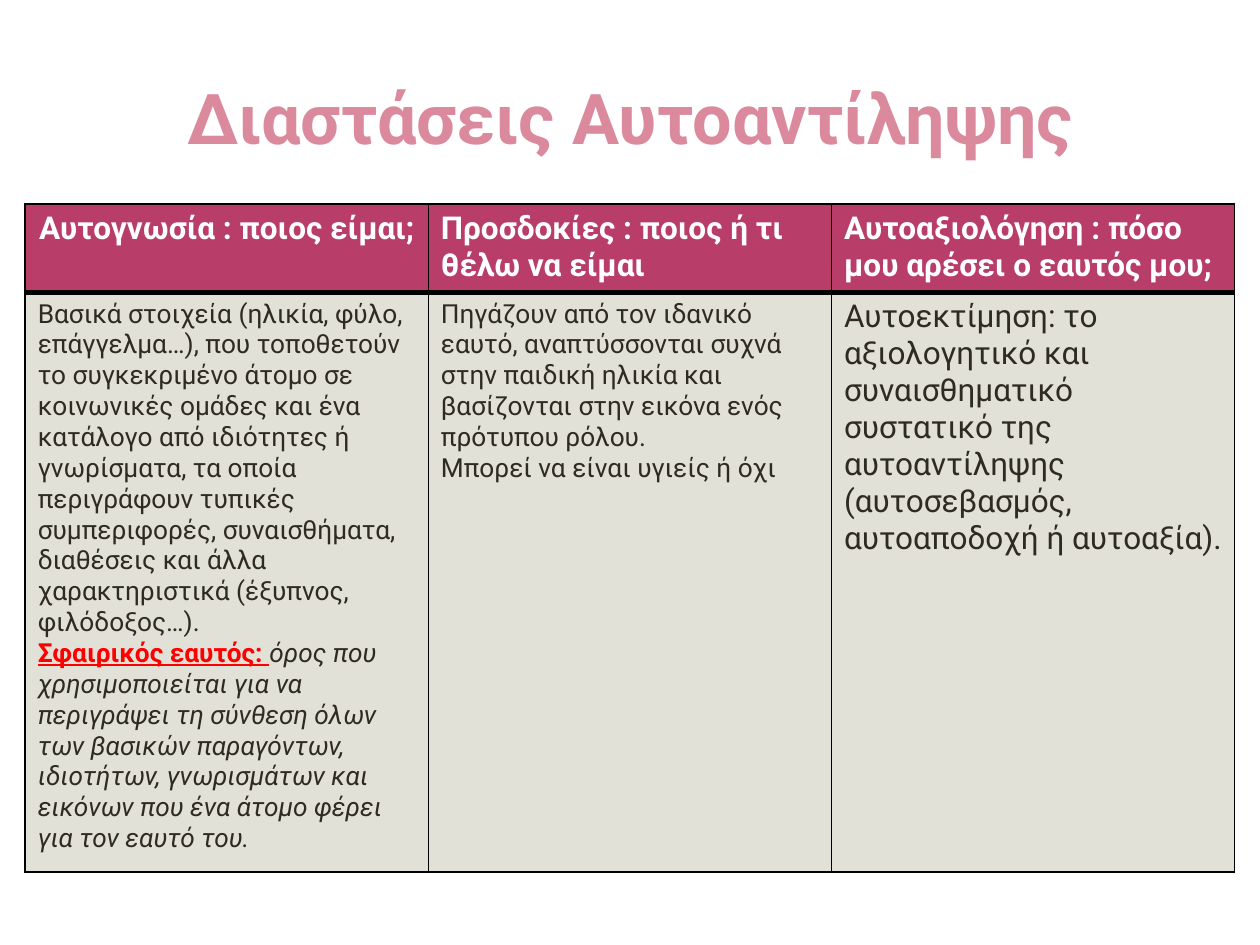
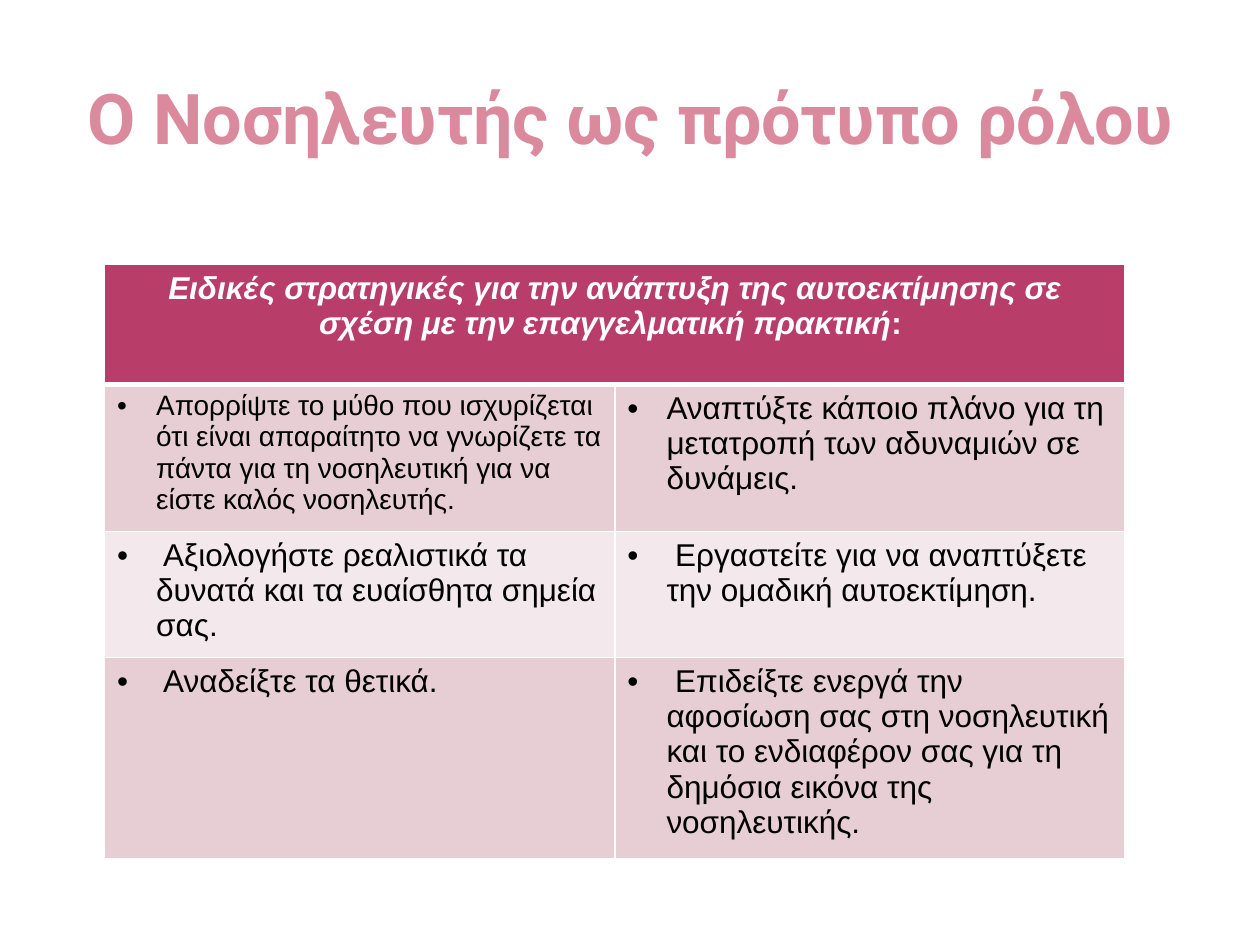
from dataclasses import dataclass, field

from lxml import etree
from pptx import Presentation
from pptx import util as u
from pptx.dml.color import RGBColor
from pptx.enum import text as t
from pptx.oxml import ns

# Shared colours and fonts
ROSE, WINE, WHITE, BLACK = "DB8A9E", "B83D68", "FFFFFF", "000000"
STONE, INK, RED = "E2E1D7", "2F2B20", "FF0000"
PINK, PALE = "E6CED4", "F3E8EB"
SANS, ARIAL = "Roboto", "Arial"
MID, LEFT = t.PP_ALIGN.CENTER, t.PP_ALIGN.LEFT
THIN, THICK = 1, 3


@dataclass
class Run:
    text: str
    style: dict = field(default_factory=dict)


@dataclass
class Cell:
    paras: list[list[Run]]
    size: int = 18
    align: t.PP_ALIGN = LEFT


@dataclass
class Grid:
    left: float
    top: float
    width: float
    heights: list[float]
    rows: list[list[Cell]]
    fills: list[str]
    font: str
    ink: str
    line: str
    head: dict
    bullet: bool = False


def tint(code: str) -> RGBColor:
    return RGBColor.from_string(code)


def put(para, text: str, *, size: int, font: str, color: str, bold=False,
        italic=False, under=False) -> None:
    """Add one formatted run to a paragraph."""
    run = para.add_run()
    run.text = text
    face = run.font
    face.size, face.name = u.Pt(size), font
    face.bold, face.italic, face.underline = bold, italic, under
    face.color.rgb = tint(color)


def dot(para) -> None:
    """Give a paragraph a hanging bullet."""
    props = para._p.get_or_add_pPr()
    props.set("marL", str(u.Inches(0.31)))
    props.set("indent", str(-u.Inches(0.31)))
    etree.SubElement(props, ns.qn("a:buFont"), typeface=ARIAL)
    etree.SubElement(props, ns.qn("a:buChar"), char="•")


def edge(cell, color: str, top: int, base: int) -> None:
    """Draw the four borders of a cell."""
    props = cell._tc.get_or_add_tcPr()
    for side, width in zip("LRTB", (THIN, THIN, top, base)):
        line = etree.SubElement(props, ns.qn(f"a:ln{side}"), w=str(u.Pt(width)))
        fill = etree.SubElement(line, ns.qn("a:solidFill"))
        etree.SubElement(fill, ns.qn("a:srgbClr"), val=color)


def title(slide, text: str) -> None:
    box = slide.shapes.add_textbox(
        u.Inches(0.5), u.Inches(0.3), u.Inches(9), u.Inches(1.25))
    frame = box.text_frame
    frame.word_wrap = True
    frame.vertical_anchor = t.MSO_ANCHOR.MIDDLE
    frame.margin_left = frame.margin_right = u.Inches(0.05)
    frame.margin_top = frame.margin_bottom = 0
    para = frame.paragraphs[0]
    para.alignment = MID
    put(para, text, size=40, font=SANS, color=ROSE, bold=True)


def write(cell, item: Cell, bullet: bool, look: dict) -> None:
    frame = cell.text_frame
    for i, runs in enumerate(item.paras):
        para = frame.add_paragraph() if i else frame.paragraphs[0]
        para.alignment = item.align
        if bullet:
            dot(para)
        for run in runs:
            put(para, run.text, **{"size": item.size, **look, **run.style})


def draw(slide, grid: Grid) -> None:
    count = len(grid.rows[-1])
    table = slide.shapes.add_table(
        len(grid.rows), count, u.Inches(grid.left), u.Inches(grid.top),
        u.Inches(grid.width), u.Inches(sum(grid.heights))).table
    for col in table.columns:
        col.width = u.Inches(grid.width / count)
    for r, (items, high) in enumerate(zip(grid.rows, grid.heights)):
        table.rows[r].height = u.Inches(high)
        # A row with a single cell spans the whole table
        if len(items) < count:
            table.cell(r, 0).merge(table.cell(r, count - 1))
        for cell in table.rows[r].cells:
            edge(cell, grid.line, THICK if r == 1 else THIN,
                 THIN if r else THICK)
            cell.fill.solid()
            cell.fill.fore_color.rgb = tint(grid.fills[r])
        look = {"font": grid.font, "color": grid.ink}
        if r == 0:
            look |= grid.head
        for c, item in enumerate(items):
            write(table.cell(r, c), item, grid.bullet and r > 0, look)


def plain(*texts: str, size: int = 18, align=LEFT) -> Cell:
    return Cell([[Run(text)] for text in texts], size, align)


# Dimensions of self-concept
SELF = Grid(
    left=0.2, top=1.62, width=9.6, heights=[0.69, 4.5],
    fills=[WINE, STONE], font=SANS, ink=INK, line=BLACK,
    head={"color": WHITE, "bold": True},
    rows=[
        [plain("Αυτογνωσία : ποιος είμαι;", align=MID),
         plain("Προσδοκίες : ποιος ή τι θέλω να είμαι"),
         plain("Αυτοαξιολόγηση : πόσο μου αρέσει ο εαυτός μου;")],
        [Cell([
            [Run("Βασικά στοιχεία (ηλικία, φύλο, επάγγελμα…), που τοποθετούν "
                 "το συγκεκριμένο άτομο σε κοινωνικές ομάδες και ένα κατάλογο "
                 "από ιδιότητες ή γνωρίσματα, τα οποία περιγράφουν τυπικές "
                 "συμπεριφορές, συναισθήματα, διαθέσεις και άλλα "
                 "χαρακτηριστικά (έξυπνος, φιλόδοξος…).")],
            [Run("Σφαιρικός εαυτός: ",
                 {"color": RED, "bold": True, "under": True}),
             Run("όρος που χρησιμοποιείται για να περιγράψει τη σύνθεση όλων "
                 "των βασικών παραγόντων, ιδιοτήτων, γνωρισμάτων και εικόνων "
                 "που ένα άτομο φέρει για τον εαυτό του.", {"italic": True})],
        ], size=15),
         plain("Πηγάζουν από τον ιδανικό εαυτό, αναπτύσσονται συχνά στην "
               "παιδική ηλικία και βασίζονται στην εικόνα ενός πρότυπου ρόλου.",
               "Μπορεί να είναι υγιείς ή όχι", size=15),
         plain("Αυτοεκτίμηση: το αξιολογητικό και συναισθηματικό συστατικό "
               "της αυτοαντίληψης (αυτοσεβασμός, αυτοαποδοχή ή αυτοαξία).")],
    ])

# Strategies for self-esteem at work
NURSE = Grid(
    left=0.83, top=2.1, width=8.1, heights=[0.95, 1.08, 0.95, 1.5],
    fills=[WINE, PINK, PALE, PINK], font=ARIAL, ink=BLACK, line=WHITE,
    head={"color": WHITE, "bold": True, "italic": True}, bullet=True,
    rows=[
        [Cell([[Run("Ειδικές στρατηγικές για την ανάπτυξη της αυτοεκτίμησης "
                    "σε σχέση με την επαγγελματική πρακτική"),
                Run(": ", {"italic": False})]], align=MID)],
        [plain("Απορρίψτε το μύθο που ισχυρίζεται ότι είναι απαραίτητο να "
               "γνωρίζετε τα πάντα για τη νοσηλευτική για να είστε καλός "
               "νοσηλευτής.", size=16),
         plain("Αναπτύξτε κάποιο πλάνο για τη μετατροπή των αδυναμιών σε "
               "δυνάμεις.")],
        [plain(" Αξιολογήστε ρεαλιστικά τα δυνατά και τα ευαίσθητα σημεία "
               "σας."),
         plain(" Εργαστείτε για να αναπτύξετε την ομαδική αυτοεκτίμηση.")],
        [plain(" Αναδείξτε τα θετικά."),
         plain(" Επιδείξτε ενεργά την αφοσίωση σας στη νοσηλευτική και το "
               "ενδιαφέρον σας για τη δημόσια εικόνα της νοσηλευτικής.")],
    ])


def main() -> None:
    deck = Presentation()
    deck.slide_width, deck.slide_height = u.Inches(10), u.Inches(7.5)
    pages = [("Διαστάσεις Αυτοαντίληψης", SELF),
             ("Ο Νοσηλευτής ως πρότυπο ρόλου", NURSE)]
    for name, grid in pages:
        slide = deck.slides.add_slide(deck.slide_layouts[6])
        title(slide, name)
        draw(slide, grid)
    deck.save("out.pptx")


if __name__ == "__main__":
    main()
